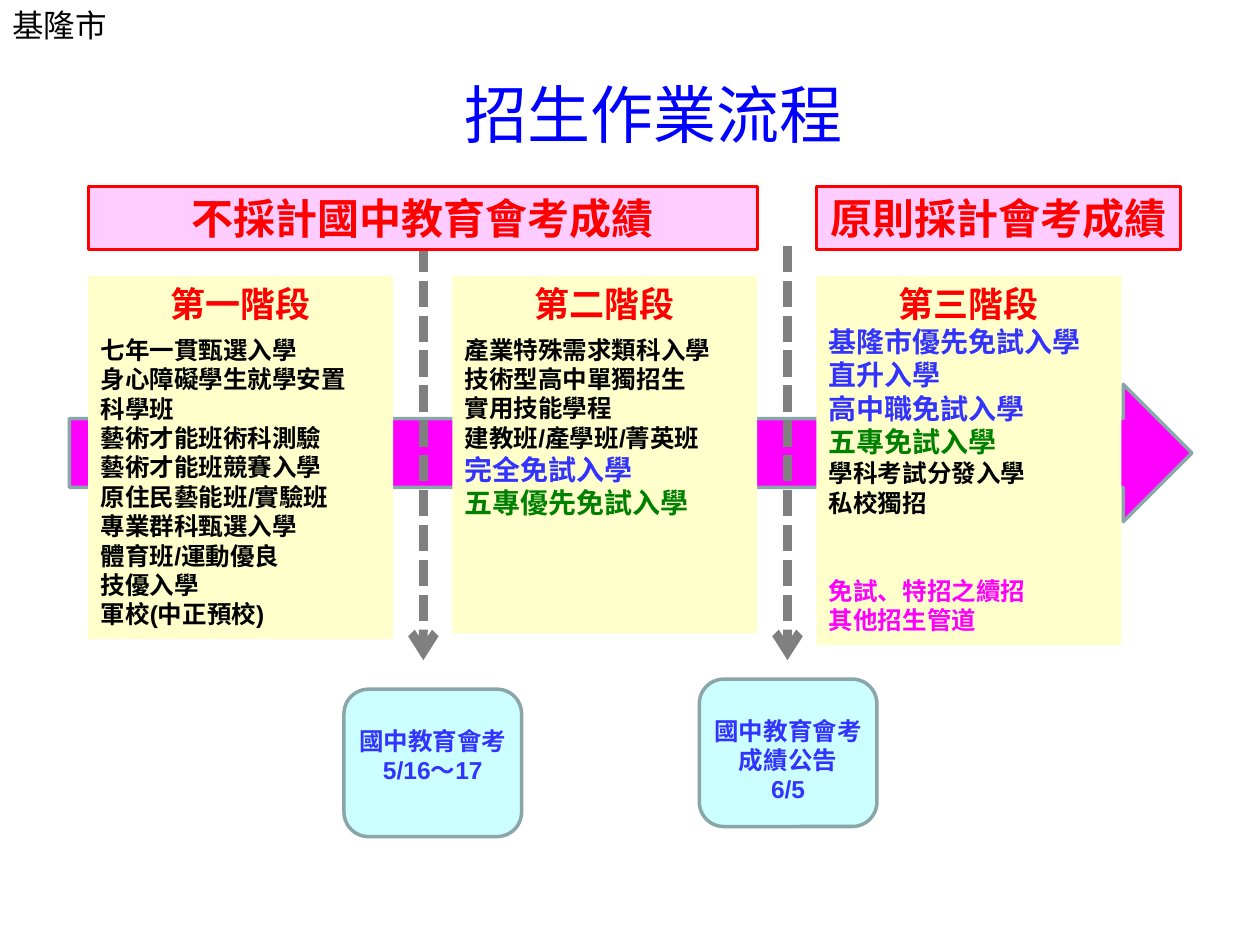
from lxml import etree
from pptx import Presentation
from pptx.dml.color import RGBColor
from pptx.enum.dml import MSO_LINE
from pptx.enum.shapes import MSO_CONNECTOR, MSO_SHAPE
from pptx.enum.text import MSO_ANCHOR, MSO_AUTO_SIZE, PP_ALIGN
from pptx.oxml.ns import qn
from pptx.util import Inches, Pt

RECTANGLE = MSO_SHAPE.RECTANGLE
ROUNDED = MSO_SHAPE.ROUNDED_RECTANGLE
RIGHT_ARROW = MSO_SHAPE.RIGHT_ARROW
STRAIGHT = MSO_CONNECTOR.STRAIGHT
DASHED = MSO_LINE.SQUARE_DOT
TOP = MSO_ANCHOR.TOP
MIDDLE = MSO_ANCHOR.MIDDLE
LEFT = PP_ALIGN.LEFT
CENTER = PP_ALIGN.CENTER
GROW = MSO_AUTO_SIZE.SHAPE_TO_FIT_TEXT
FIXED = MSO_AUTO_SIZE.NONE

SANS = "Arial"
SERIF = "Times New Roman"
BANNER_FONT = "Noto Sans CJK SC"
BLACK = "000000"
RED = "FF0000"
BLUE = "3333FF"
GREEN = "008000"
MAGENTA = "FF00FF"
EDGE = "8AA6A8"

PANEL_LEFT = 0.7
PANEL_STEP = 2.89

STAGES = [
    ("第一階段", 2.88, 6, [
        (14, SANS, BLACK, ["七年一貫甄選入學", "身心障礙學生就學安置", "科學班",
                           "藝術才能班術科測驗", "藝術才能班競賽入學",
                           "原住民藝能班/實驗班", "專業群科甄選入學",
                           "體育班/運動優良", "技優入學", "軍校(中正預校)"]),
    ]),
    ("第二階段", 2.84, 6, [
        (14, SANS, BLACK, ["產業特殊需求類科入學", "技術型高中單獨招生",
                           "實用技能學程", "建教班/產學班/菁英班"]),
        (16, SERIF, BLUE, ["完全免試入學"]),
        (16, SANS, GREEN, ["五專優先免試入學"]),
    ]),
    ("第三階段", 2.93, 0, [
        (16, SERIF, BLUE, ["基隆市優先免試入學", "直升入學"]),
        (16, SANS, BLUE, ["高中職免試入學"]),
        (16, SANS, GREEN, ["五專免試入學"]),
        (14, SANS, BLACK, ["學科考試分發入學", "私校獨招"]),
        (14, SANS, MAGENTA, ["免試、特招之續招", "其他招生管道"]),
    ]),
]
CLOSING_LINE = "免試、特招之續招"
CLOSING_GAP = 33.5

MILESTONES = [
    (2.73, 5.47, 0.57, ["國中教育會考", "5/16～17"], 3.36),
    (5.55, 5.39, 0.81, ["國中教育會考成績公告", "6/5"], 6.25),
]
BANNERS = [(0, 5.31, "不採計國中教育會考成績"), (2, 2.89, "原則採計會考成績")]


def color(value):
    return RGBColor.from_string(value)


def place(left, top, width, height):
    return [Inches(length) for length in (left, top, width, height)]


def add_block(shapes, kind, area, fill, edge=None, edge_width=2):
    block = shapes.add_shape(kind, *place(*area))
    block.shadow.inherit = False
    block.fill.solid()
    block.fill.fore_color.rgb = color(fill)
    if edge:
        block.line.color.rgb = color(edge)
        block.line.width = Pt(edge_width)
    else:
        block.line.fill.background()
    return block


def prepare_frame(shape, anchor=TOP, auto_size=GROW):
    frame = shape.text_frame
    frame.word_wrap = True
    frame.vertical_anchor = anchor
    frame.auto_size = auto_size
    return frame


def write_line(para, text, size, font, shade, bold=True, align=LEFT, before=0):
    para.alignment = align
    if before:
        para.space_before = Pt(before)
    span = para.add_run()
    span.text = text
    span.font.size = Pt(size)
    span.font.name = font
    span.font.bold = bold
    span.font.color.rgb = color(shade)


def add_title(page):
    title = page.shapes.title
    title.left, title.top, title.width, title.height = place(3.59, 0.47, 3.2, 0.86)
    frame = prepare_frame(title, MIDDLE, FIXED)
    frame.margin_right = 0
    write_line(frame.paragraphs[0], "招生作業流程", 36, SERIF, "0000FF", bold=False)


def add_stage(page, index):
    name, height, gap, groups = STAGES[index]
    left = PANEL_LEFT + index * PANEL_STEP
    panel = add_block(page.shapes, RECTANGLE, (left, 2.19, 2.42, height), "FFFFCC")
    frame = prepare_frame(panel)
    write_line(frame.paragraphs[0], name, 20, SANS, RED, align=CENTER)
    for size, font, shade, lines in groups:
        for text in lines:
            before = CLOSING_GAP if text == CLOSING_LINE else gap
            write_line(frame.add_paragraph(), text, size, font, shade, before=before)
            gap = 0


def add_milestone(page, left, top, text_height, lines):
    group = page.shapes.add_group_shape()
    add_block(group.shapes, ROUNDED, (left, top, 1.41, 1.17), "CCFFFF", EDGE)
    box = group.shapes.add_textbox(*place(left, top + 0.24, 1.41, text_height))
    frame = prepare_frame(box)
    for index, text in enumerate(lines):
        para = frame.add_paragraph() if index else frame.paragraphs[0]
        write_line(para, text, 14, SANS, BLUE, align=CENTER)


def add_dashed_arrow(page, x):
    arrow = page.shapes.add_connector(
        STRAIGHT, Inches(x), Inches(1.95), Inches(x), Inches(5.24))
    arrow.line.color.rgb = color("808080")
    arrow.line.width = Pt(5)
    arrow.line.dash_style = DASHED
    properties = arrow._element.spPr
    etree.SubElement(properties.find(qn("a:ln")), qn("a:tailEnd"), type="arrow")
    etree.SubElement(properties, qn("a:effectLst"))


def add_banner(page, column, width, text):
    left = PANEL_LEFT + column * PANEL_STEP
    banner = add_block(page.shapes, RECTANGLE, (left, 1.48, width, 0.5),
                       "FFCCFF", RED, 1.5)
    frame = prepare_frame(banner)
    write_line(frame.paragraphs[0], text, 24, BANNER_FONT, RED, align=CENTER)


def add_city(page):
    box = page.shapes.add_textbox(*place(0, 0, 1.5, 0.4))
    frame = prepare_frame(box)
    write_line(frame.paragraphs[0], "基隆市", 18, SANS, BLACK, bold=False)


def main():
    deck = Presentation()
    deck.slide_width, deck.slide_height = Inches(10), Inches(7.5)
    page = deck.slides.add_slide(deck.slide_layouts[5])
    add_block(page.shapes, RIGHT_ARROW, (0.55, 3.05, 8.91, 1.09), MAGENTA, EDGE)
    add_title(page)
    add_stage(page, 0)
    for left, top, text_height, lines, arrow_x in MILESTONES:
        add_milestone(page, left, top, text_height, lines)
        add_dashed_arrow(page, arrow_x)
    add_stage(page, 1)
    add_stage(page, 2)
    for column, width, text in BANNERS:
        add_banner(page, column, width, text)
    add_city(page)
    deck.save("out.pptx")


if __name__ == "__main__":
    main()
